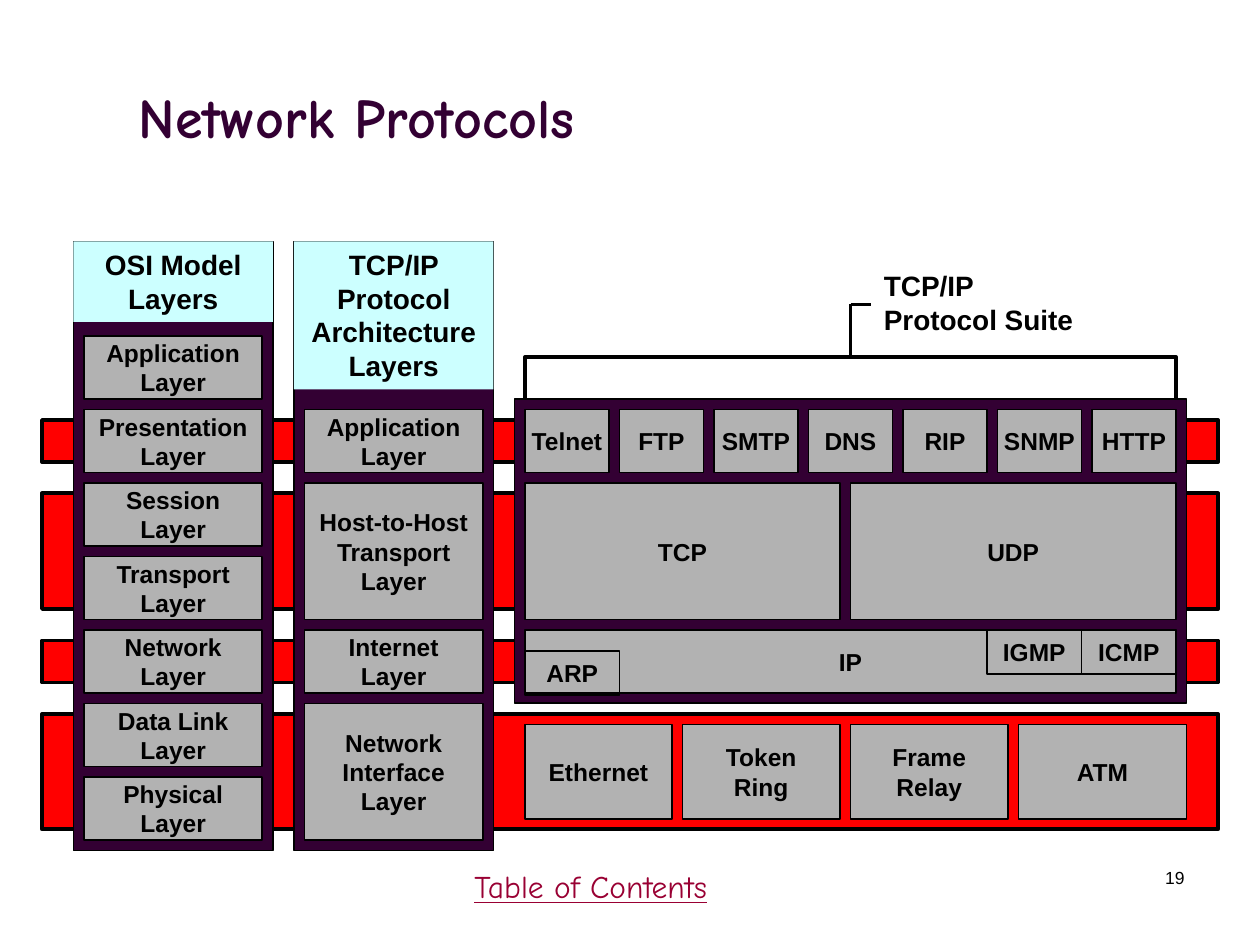
import pptx
import pptx.util
import pptx.dml.color
import pptx.enum.shapes
import pptx.enum.text
import pptx.oxml.ns
import lxml.etree

Pt = pptx.util.Pt
ALIGN = pptx.enum.text.PP_ALIGN
ANCHOR = pptx.enum.text.MSO_ANCHOR
COLORS = {
    "black": "000000",
    "red": "FF0000",
    "plum": "330033",
    "gray": "B2B2B2",
    "cyan": "CCFFFF",
    "wine": "990033",
}
TOP, STEP, ROW, GAP = 192, 42, 36, 6


def color(name):
    return pptx.dml.color.RGBColor.from_string(COLORS[name])


def write(shape, text, size=14, font="Arial", ink="black", bold=True,
          under=False, align=ALIGN.CENTER, anchor=ANCHOR.MIDDLE, wrap=True):
    frame = shape.text_frame
    frame.word_wrap = wrap
    frame.vertical_anchor = anchor
    for num, line in enumerate(text.split("\n")):
        para = frame.add_paragraph() if num else frame.paragraphs[0]
        para.alignment = align
        run = para.add_run()
        run.text = line
        run.font.size = Pt(size)
        run.font.name = font
        run.font.bold = bold
        run.font.underline = under
        run.font.color.rgb = color(ink)


def rect(slide, x, y, w, h, fill=None, line=1):
    kind = pptx.enum.shapes.MSO_SHAPE.RECTANGLE
    shape = slide.shapes.add_shape(kind, Pt(x), Pt(y), Pt(w), Pt(h))
    shape.shadow.inherit = False
    if fill:
        shape.fill.solid()
        shape.fill.fore_color.rgb = color(fill)
    else:
        shape.fill.background()
    if line:
        shape.line.color.rgb = color("black")
        shape.line.width = Pt(line)
    else:
        shape.line.fill.background()
    return shape


def box(slide, text, x, y, w, h=ROW, fill="gray"):
    write(rect(slide, x, y, w, h, fill), text, wrap=False)


def label(slide, text, x, y, w, h, **form):
    shape = slide.shapes.add_textbox(Pt(x), Pt(y), Pt(w), Pt(h))
    write(shape, text, anchor=ANCHOR.TOP, **form)
    return shape


def link(slide, x1, y1, x2, y2):
    kind = pptx.enum.shapes.MSO_CONNECTOR.STRAIGHT
    line = slide.shapes.add_connector(kind, Pt(x1), Pt(y1), Pt(x2), Pt(y2))
    line.line.color.rgb = color("black")
    line.line.width = Pt(2.25)
    tag = pptx.oxml.ns.qn("a:effectLst")
    lxml.etree.SubElement(line._element.spPr, tag)
    return line


def stack(slide, x, head, tall, layers):
    rect(slide, x, 138, 114, 348, "plum")
    for text, row, span in layers:
        box(slide, text + "\nLayer", x + GAP, TOP + row * STEP, 102, span * STEP - GAP)
    cap = rect(slide, x, 138, 114, tall, "cyan", line=None)
    write(cap, head, size=16, anchor=ANCHOR.TOP)


def across(slide, names, x, y, widths, h):
    for name, w in zip(names, widths):
        box(slide, name, x, y, w, h)
        x += w + GAP


def suite(slide):
    frame = rect(slide, 300, 204, 372, 42, line=2.25)
    rect(slide, 294, 228, 384, 174, "plum")
    apps = ["Telnet", "FTP", "SMTP", "DNS", "RIP", "SNMP", "HTTP"]
    across(slide, apps, 300, TOP + STEP, [48] * len(apps), ROW)
    across(slide, ["TCP", "UDP"], 300, TOP + 2 * STEP, [180, 186], 2 * STEP - GAP)
    box(slide, "IP", 300, TOP + 4 * STEP, 372)
    for name, x, y in [("ARP", 300, 372), ("ICMP", 618, 360), ("IGMP", 564, 360)]:
        box(slide, name, x, y, 54, 25.2, fill=None)
    nets = ["Ethernet", "Token\nRing", "Frame\nRelay", "ATM"]
    across(slide, nets, 300, 414, [84, 90, 90, 96], 54)
    name = label(slide, "TCP/IP\nProtocol Suite", 498, 150, 132, 48, size=16, align=ALIGN.LEFT)
    link(slide, 486, 204, 486, 174).begin_connect(frame, 0)
    link(slide, 486, 174, 498, 174).end_connect(name, 1)


def main():
    deck = pptx.Presentation()
    deck.slide_width, deck.slide_height = Pt(720), Pt(540)
    slide = deck.slides.add_slide(deck.slide_layouts[5])
    title = slide.shapes.title
    title.left, title.top, title.width, title.height = Pt(72), Pt(21.6), Pt(612), Pt(90)
    write(title, "Network Protocols", size=32, font="Comic Neue", ink="plum", align=ALIGN.LEFT)

    for row, span in [(1, 1), (2, 2), (4, 1), (5, 2)]:
        rect(slide, 24, TOP + row * STEP + GAP, 672, span * STEP - 3 * GAP, "red", 2.25)
    osi = ["Application", "Presentation", "Session", "Transport",
           "Network", "Data Link", "Physical"]
    stack(slide, 42, "OSI Model Layers", 46,
          [(name, row, 1) for row, name in enumerate(osi)])
    stack(slide, 168, "TCP/IP Protocol Architecture Layers", 84.5,
          [("Application", 1, 1), ("Host-to-Host\nTransport", 2, 2),
           ("Internet", 4, 1), ("Network\nInterface", 5, 2)])
    suite(slide)

    label(slide, "Table of Contents", 264, 492, 234, 36, size=18, font="Comic Neue",
          ink="wine", bold=False, under=True, align=ALIGN.LEFT)
    label(slide, "19", 534, 492, 150, 36, size=10, bold=False, align=ALIGN.RIGHT)
    deck.save("out.pptx")


if __name__ == "__main__":
    main()
